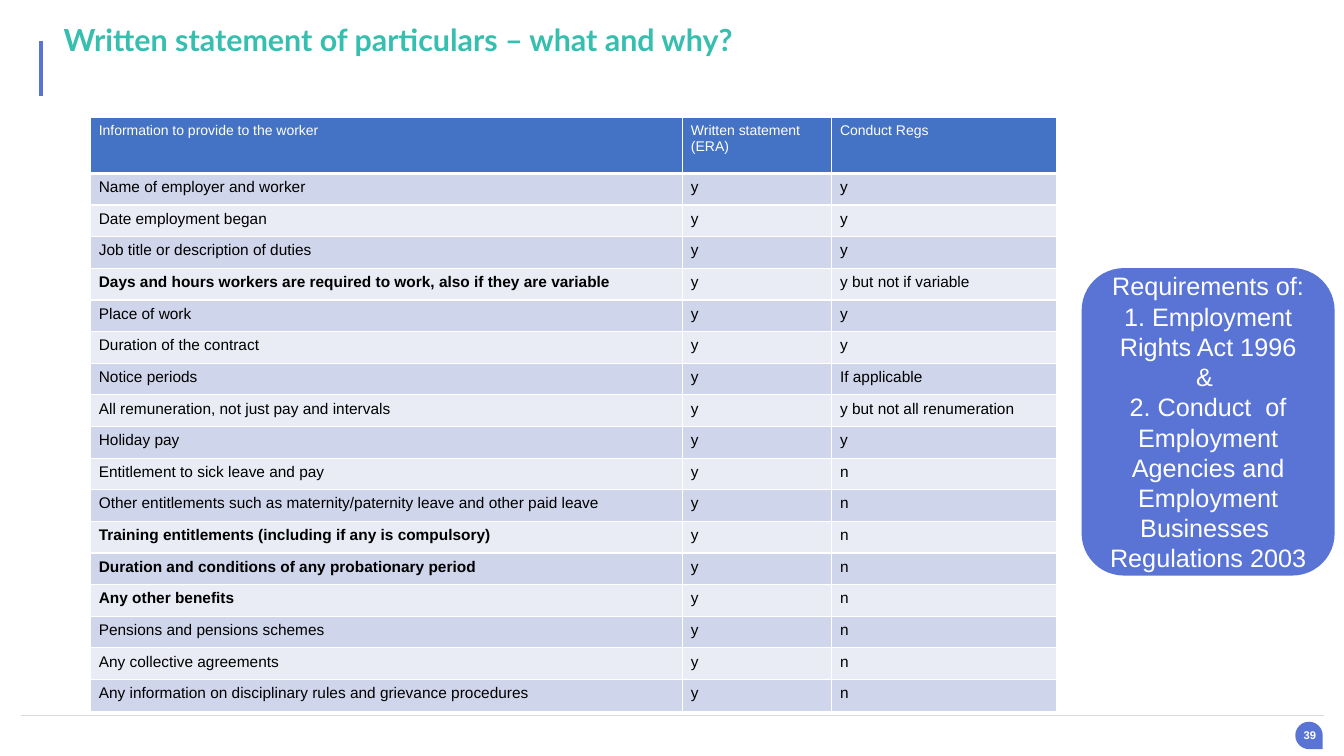
import pptx
import pptx.util
import pptx.dml.color
import pptx.enum.shapes
import pptx.enum.text
import pptx.oxml
import pptx.oxml.ns

Pt = pptx.util.Pt
Shape = pptx.enum.shapes.MSO_SHAPE
Align = pptx.enum.text.PP_ALIGN
Anchor = pptx.enum.text.MSO_ANCHOR
BLUE = "5974D4"
WHITE = "FFFFFF"


def paint(color_format, value):
    color_format.rgb = pptx.dml.color.RGBColor.from_string(value)


def style(para, size, color, bold=False, font="Arial"):
    para.font.name = font
    para.font.size = Pt(size)
    para.font.bold = bold
    paint(para.font.color, color)


deck = pptx.Presentation()
deck.slide_width = Pt(960)
deck.slide_height = Pt(540)
page = deck.slides.add_slide(deck.slide_layouts[5])

title = page.shapes.title
title.left, title.top, title.width, title.height = Pt(38.2), Pt(18.7), Pt(571.7), Pt(44.6)
title.text_frame.text = "Written statement of particulars – what and why?"
title.text_frame.auto_size = pptx.enum.text.MSO_AUTO_SIZE.NONE
title.text_frame.vertical_anchor = Anchor.TOP
heading = title.text_frame.paragraphs[0]
heading.alignment = Align.LEFT
heading.line_spacing = 0.7
style(heading, 21.7, "36BEAE", True, "Lato")

rules = [
    (15, 511, 945.5, 511, "D9D9D9", 0.5),
    (29.5, 29, 29.5, 68.5, BLUE, 3),
]
for x1, y1, x2, y2, color, weight in rules:
    rule = page.shapes.add_connector(
        pptx.enum.shapes.MSO_CONNECTOR.STRAIGHT, Pt(x1), Pt(y1), Pt(x2), Pt(y2))
    paint(rule.line.color, color)
    rule.line.width = Pt(weight)
    rule._element.spPr.append(pptx.oxml.parse_xml(
        f"<a:effectLst {pptx.oxml.ns.nsdecls('a')}/>"))

badge = page.shapes.add_shape(Shape.TEAR, Pt(925.2), Pt(515.5), Pt(19.6), Pt(19.6))
badge.rotation = 90
requirements = page.shapes.add_shape(
    Shape.ROUNDED_RECTANGLE, Pt(772.6), Pt(191.5), Pt(180.7), Pt(219.6))
for shape in (badge, requirements):
    shape.shadow.inherit = False
    shape.fill.solid()
    paint(shape.fill.fore_color, BLUE)
    shape.line.fill.background()

number = page.shapes.add_textbox(Pt(921.6), Pt(507.6), Pt(28), Pt(35.3))
number.text_frame.word_wrap = True
number.text_frame.text = "39"
number.text_frame.vertical_anchor = Anchor.MIDDLE
number.text_frame.paragraphs[0].alignment = Align.CENTER
style(number.text_frame.paragraphs[0], 8, WHITE, True)

requirements.text_frame.word_wrap = True
requirements.text_frame.vertical_anchor = Anchor.MIDDLE
requirements.text_frame.text = "\n".join([
    "Requirements of:",
    "1. Employment Rights Act 1996",
    "& ",
    "2. Conduct  of Employment Agencies and Employment Businesses  Regulations 2003",
])
for para in requirements.text_frame.paragraphs:
    para.alignment = Align.CENTER
    style(para, 18, WHITE)

rows = [
    ("Information to provide to the worker", "Written statement  (ERA)", "Conduct Regs"),
    ("Name of employer and worker", "y", "y"),
    ("Date employment began", "y", "y"),
    ("Job title or description of duties", "y", "y"),
    ("Days and hours workers are required to work, also if they are variable",
     "y", "y but not if variable"),
    ("Place of work", "y", "y"),
    ("Duration of the contract", "y", "y"),
    ("Notice periods", "y", "If applicable"),
    ("All remuneration, not just pay and intervals", "y", "y but not all renumeration"),
    ("Holiday pay", "y", "y"),
    ("Entitlement to sick leave and pay", "y", "n"),
    ("Other entitlements such as maternity/paternity leave and other paid leave", "y", "n"),
    ("Training entitlements (including if any is compulsory)", "y", "n"),
    ("Duration and conditions of any probationary period", "y", "n"),
    ("Any other benefits", "y", "n"),
    ("Pensions and pensions schemes", "y", "n"),
    ("Any collective agreements", "y", "n"),
    ("Any information on disciplinary rules and grievance procedures", "y", "n"),
]
bold_rows = {4, 12, 13, 14}

table = page.shapes.add_table(
    len(rows), 3, Pt(64.4), Pt(83.9), Pt(690), Pt(424.2)).table
for column, width in zip(table.columns, (423, 106.5, 160.5)):
    column.width = Pt(width)

for r, texts in enumerate(rows):
    header = r == 0
    table.rows[r].height = Pt(40 if header else 22.6)
    for c, text in enumerate(texts):
        cell = table.cell(r, c)
        cell.margin_left = cell.margin_right = Pt(6.2)
        cell.margin_top = cell.margin_bottom = Pt(2.9)
        for side in "LRTB":
            weight = Pt(3 if header and side == "B" else 1)
            cell._tc.get_or_add_tcPr().append(pptx.oxml.parse_xml(
                f'<a:ln{side} {pptx.oxml.ns.nsdecls("a")} w="{weight}"><a:solidFill>'
                f'<a:srgbClr val="{WHITE}"/></a:solidFill></a:ln{side}>'))
        cell.fill.solid()
        paint(cell.fill.fore_color, "4472C4" if header else ("E9EBF5", "CFD5EA")[r % 2])
        cell.text = text
        para = cell.text_frame.paragraphs[0]
        para.line_spacing = 1.07
        para.space_after = Pt(8)
        style(para, 10 if header else 11, WHITE if header else "000000",
              c == 0 and r in bold_rows)

deck.save("out.pptx")
